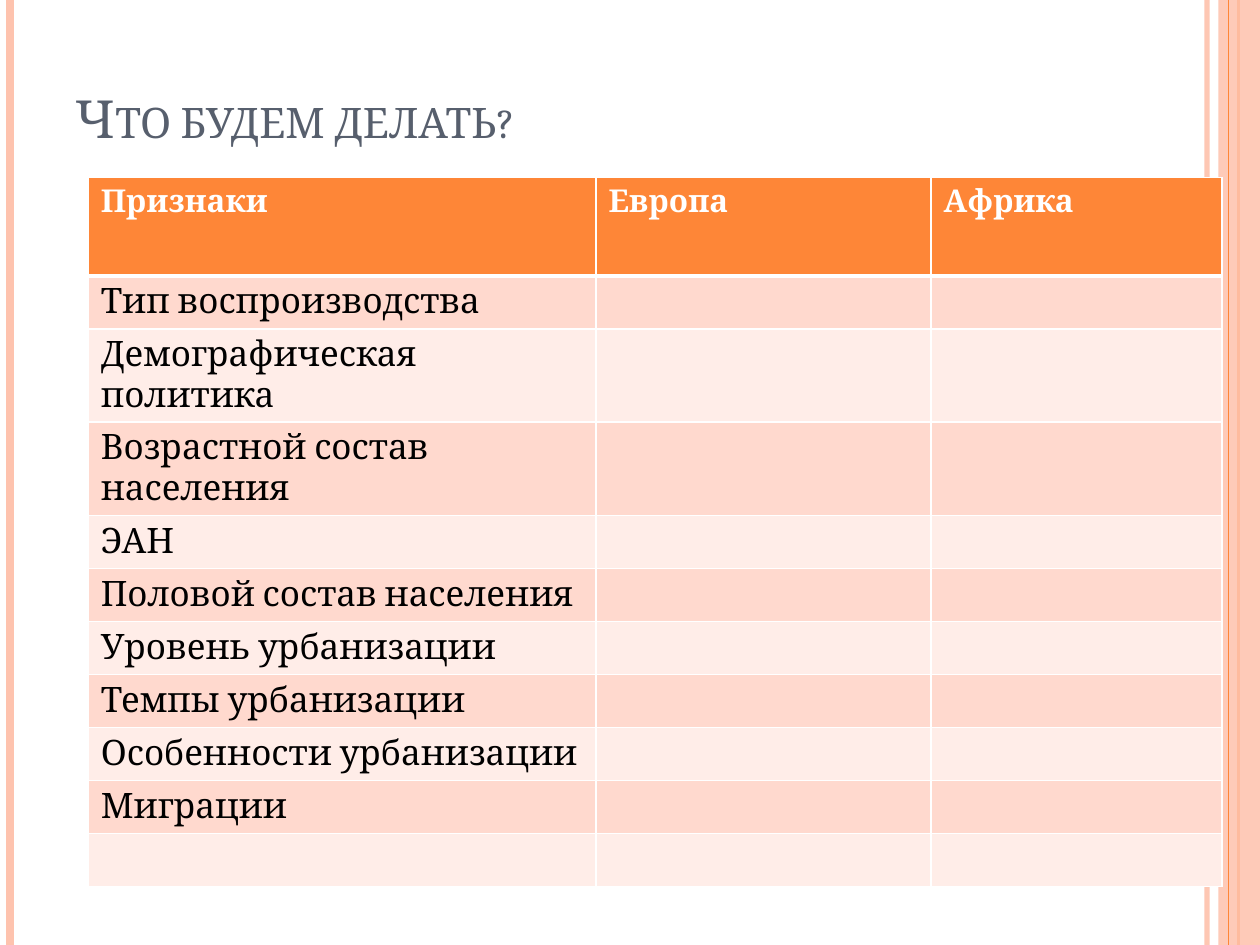
from lxml.etree import SubElement
from pptx import Presentation
from pptx.dml.color import RGBColor
from pptx.enum.shapes import MSO_CONNECTOR, MSO_SHAPE
from pptx.enum.text import MSO_ANCHOR, PP_ALIGN
from pptx.oxml.ns import qn
from pptx.util import Inches, Pt

FONT = "Cambria"
WHITE = RGBColor(0xFF, 0xFF, 0xFF)
BLACK = RGBColor(0x00, 0x00, 0x00)
SLATE = RGBColor(0x57, 0x5F, 0x6D)
ORANGE = RGBColor(0xFE, 0x86, 0x37)
PEACH = RGBColor(0xFE, 0xC3, 0xAE)
ROSE = RGBColor(0xFF, 0xD9, 0xCE)
PALE = RGBColor(0xFF, 0xED, 0xE8)

# Content
TITLE = "Что будем делать?"
HEAD = ["Признаки", "Европа", "Африка"]
SIGNS = [
    "Тип воспроизводства",
    "Демографическая политика",
    "Возрастной состав населения",
    "ЭАН",
    "Половой состав населения",
    "Уровень урбанизации",
    "Темпы урбанизации",
    "Особенности урбанизации",
    "Миграции",
    "",
]
ROWS = [HEAD] + [[sign, "", ""] for sign in SIGNS]
WIDTHS = [4.03, 2.66, 2.31]
HEIGHTS = [0.78, 0.41, 0.41, 0.46] + [0.41] * 7

# Side stripes: x, colour, width in points, opacity in percent
BACK = [(9.58, PEACH, 3, 93), (0.08, PEACH, 4.5, 100), (9.83, ORANGE, 1.5, 100)]
FRONT = [(9.75, ORANGE, 0.75, 100)]


def fade(part, alpha):
    """Set the opacity of the solid colour within an element."""
    color = next(part.iter(qn("a:srgbClr")))
    SubElement(color, qn("a:alpha"), val=str(alpha * 1000))


def stripe(slide, x, color, width, alpha):
    line = slide.shapes.add_connector(
        MSO_CONNECTOR.STRAIGHT, Inches(x), 0, Inches(x), Inches(7.5))
    line.line.color.rgb = color
    line.line.width = Pt(width)
    props = line._element.spPr
    if alpha < 100:
        fade(props, alpha)
    SubElement(props, qn("a:effectLst"))


def border(cell, side, width):
    props = cell._tc.get_or_add_tcPr()
    edge = SubElement(props, qn("a:ln" + side), w=str(Pt(width)))
    fill = SubElement(edge, qn("a:solidFill"))
    SubElement(fill, qn("a:srgbClr"), val=str(WHITE))


def style(para, size, color, bold=False):
    font = para.font
    font.name, font.size, font.bold = FONT, Pt(size), bold
    font.color.rgb = color


deck = Presentation()
deck.slide_width, deck.slide_height = Inches(10), Inches(7.5)
slide = deck.slides.add_slide(deck.slide_layouts[5])

# Side stripes and band
for item in BACK:
    stripe(slide, *item)
band = slide.shapes.add_shape(
    MSO_SHAPE.RECTANGLE, Inches(9.67), 0, Inches(0.33), Inches(7.5))
band.shadow.inherit = False
band.fill.solid()
band.fill.fore_color.rgb = PEACH
fade(band._element.spPr, 87)
band.line.fill.background()
for item in FRONT:
    stripe(slide, *item)

# Title in small capitals
title = slide.shapes.title
title.left, title.top = Inches(0.5), Inches(0.3)
title.width, title.height = Inches(9), Inches(0.93)
frame = title.text_frame
frame.text = TITLE
frame.vertical_anchor = MSO_ANCHOR.BOTTOM
para = frame.paragraphs[0]
para.alignment = PP_ALIGN.LEFT
style(para, 30, SLATE)
para.runs[0]._r.get_or_add_rPr().set("cap", "small")

# Table
table = slide.shapes.add_table(
    len(ROWS), len(HEAD), Inches(0.7), Inches(1.41),
    Inches(sum(WIDTHS)), Inches(sum(HEIGHTS))).table
for col, width in zip(table.columns, WIDTHS):
    col.width = Inches(width)
for row, height in zip(table.rows, HEIGHTS):
    row.height = Inches(height)
for r, texts in enumerate(ROWS):
    top = r == 0
    for c, text in enumerate(texts):
        cell = table.cell(r, c)
        for side in "LRTB":
            thick = (top and side == "B") or (r == 1 and side == "T")
            border(cell, side, 3 if thick else 1)
        cell.fill.solid()
        cell.fill.fore_color.rgb = ORANGE if top else ROSE if r % 2 else PALE
        cell.text = text
        para = cell.text_frame.paragraphs[0]
        style(para, 18 if top else 20, WHITE if top else BLACK, top)

deck.save("out.pptx")
